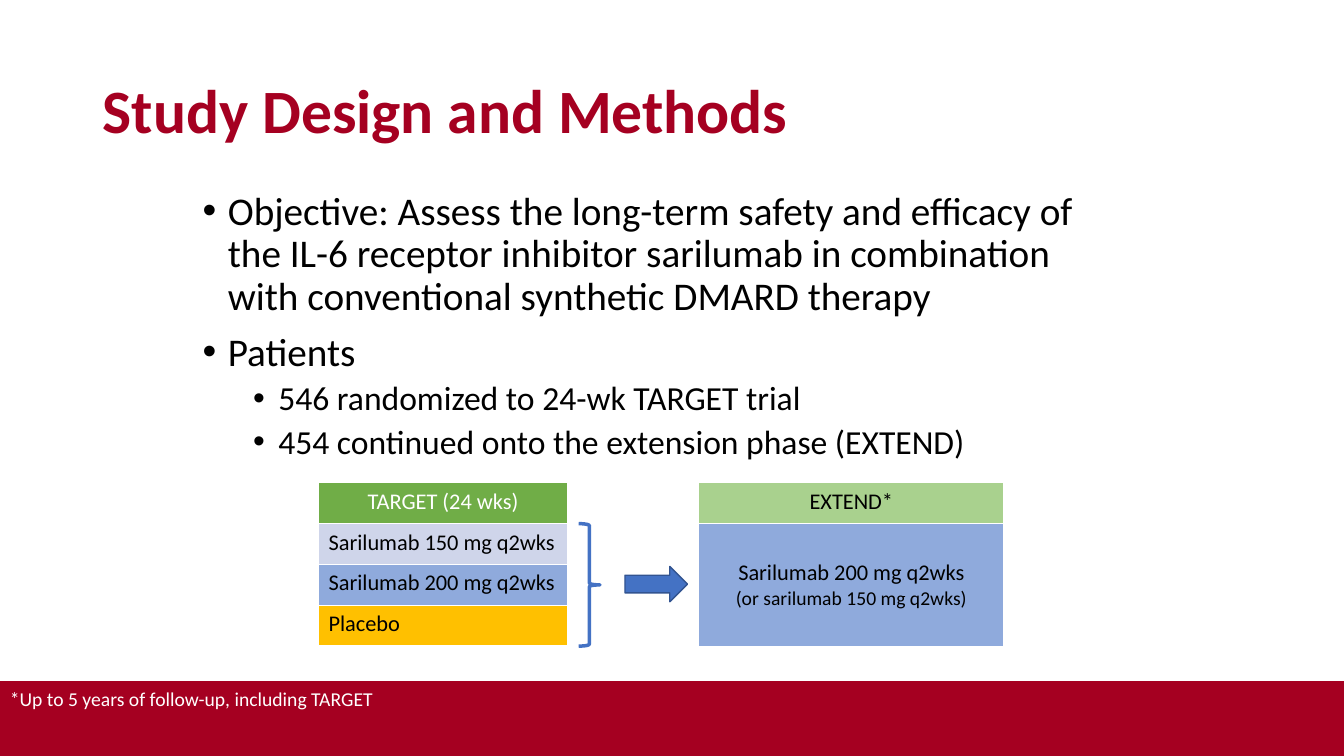
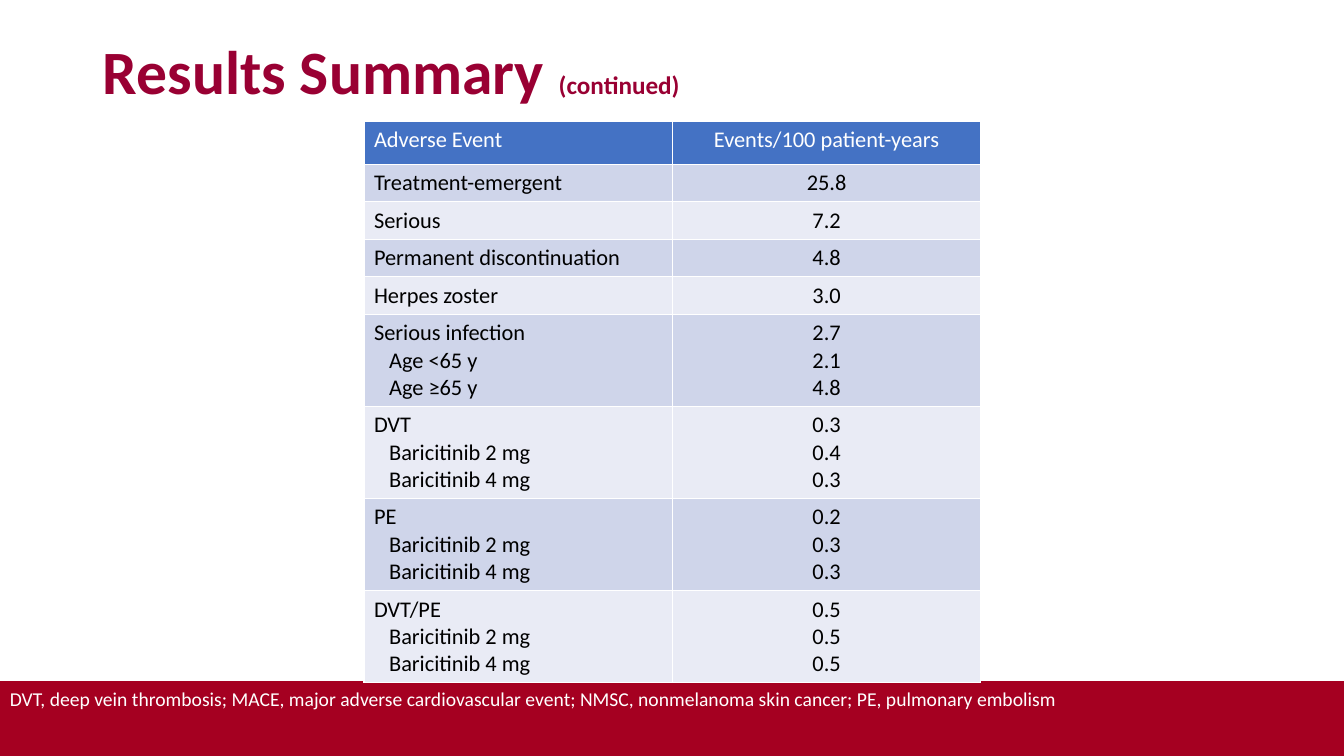
from lxml import etree
from pptx import Presentation
from pptx.dml.color import RGBColor
from pptx.enum.shapes import MSO_SHAPE
from pptx.enum.text import MSO_ANCHOR, MSO_AUTO_SIZE, PP_ALIGN
from pptx.oxml.ns import qn
from pptx.util import Inches, Pt

FONT = "Calibri"
WHITE = RGBColor(0xFF, 0xFF, 0xFF)
BLACK = RGBColor(0x00, 0x00, 0x00)
CRIMSON = RGBColor(0xA5, 0x00, 0x21)
WINE = RGBColor(0x99, 0x00, 0x33)
BLUE = RGBColor(0x44, 0x72, 0xC4)
DARK_BLUE = RGBColor(0x32, 0x54, 0x91)
MID_BLUE = RGBColor(0x8F, 0xAA, 0xDC)
PALE_BLUE = RGBColor(0xCF, 0xD5, 0xEA)
PALEST_BLUE = RGBColor(0xE9, 0xEB, 0xF5)
GREEN = RGBColor(0x70, 0xAD, 0x47)
PALE_GREEN = RGBColor(0xA9, 0xD1, 0x8E)
AMBER = RGBColor(0xFF, 0xC0, 0x00)

LEFT, CENTER = PP_ALIGN.LEFT, PP_ALIGN.CENTER
TOP, MIDDLE = MSO_ANCHOR.TOP, MSO_ANCHOR.MIDDLE
RECTANGLE = MSO_SHAPE.RECTANGLE
BRACE, ARROW = MSO_SHAPE.RIGHT_BRACE, MSO_SHAPE.RIGHT_ARROW
NO_FIT = MSO_AUTO_SIZE.NONE

deck = Presentation()
deck.slide_width, deck.slide_height = Inches(40 / 3), Inches(7.5)
CONTENT_LAYOUT, TITLE_ONLY_LAYOUT = deck.slide_layouts[1], deck.slide_layouts[5]


def place(left, top, width, height):
    """Turn percentages of the slide's width and height into lengths."""
    across, down = deck.slide_width / 100, deck.slide_height / 100
    return int(left * across), int(top * down), int(width * across), int(height * down)


def add_grid(page, left, top, column_width, row_heights, rows):
    """Add a table; each row is (fill, text colour, anchor, cells), each cell
    (alignment, lines), each line (text, size, indent in inches)."""
    frame = page.shapes.add_table(
        len(rows), len(rows[0][3]),
        *place(left, top, column_width * len(rows[0][3]), sum(row_heights)))
    table = frame.table
    for column in table.columns:
        column.width = place(0, 0, column_width, 0)[2]
    for number, (fill, color, anchor, cells) in enumerate(rows):
        table.rows[number].height = place(0, 0, 0, row_heights[number])[3]
        for cell, (alignment, lines) in zip(table.rows[number].cells, cells):
            cell.vertical_anchor = anchor
            properties = cell._tc.get_or_add_tcPr()
            for side in ("a:lnL", "a:lnR", "a:lnT", "a:lnB"):
                border = etree.SubElement(properties, qn(side), w=str(Pt(1)))
                solid = etree.SubElement(border, qn("a:solidFill"))
                etree.SubElement(solid, qn("a:srgbClr"), val=str(WHITE))
            cell.fill.solid()
            cell.fill.fore_color.rgb = fill
            cell.text_frame.text = "\n".join(line[0] for line in lines)
            for para, (_, size, indent) in zip(cell.text_frame.paragraphs, lines):
                para.alignment = alignment
                if indent:
                    para._p.get_or_add_pPr().set("marL", str(Inches(indent)))
                font = para.runs[0].font
                font.name, font.size, font.bold = FONT, Pt(size), False
                font.color.rgb = color


# Frame of every slide: title, footer band and footnote
pages = []
for layout, title_top, title_color, title_spans, note, note_width in [
    (CONTENT_LAYOUT, 5.33, CRIMSON, [("Study Design and Methods", 44)],
     "*Up to 5 years of follow-up, including TARGET", 33),
    (TITLE_ONLY_LAYOUT, 0.13, WINE, [("Results Summary ", 44), ("(continued)", 18)],
     "DVT, deep vein thrombosis; MACE, major adverse cardiovascular event; "
     "NMSC, nonmelanoma skin cancer; PE, pulmonary embolism", 84),
]:
    page = deck.slides.add_slide(layout)
    pages.append(page)

    title = page.shapes.title
    title.left, title.top, title.width, title.height = place(6.9, title_top, 86.25, 19.33)
    title.text_frame.auto_size = NO_FIT
    title.text_frame.vertical_anchor = MIDDLE
    para = title.text_frame.paragraphs[0]
    para.alignment, para.line_spacing = LEFT, 0.9
    for text, size in title_spans:
        span = para.add_run()
        span.text = text
        span.font.name, span.font.size, span.font.bold = FONT, Pt(size), True
        span.font.color.rgb = title_color

    band = page.shapes.add_shape(RECTANGLE, *place(0, 90.1, 100, 9.9))
    band.shadow.inherit = False
    band.fill.solid()
    band.fill.fore_color.rgb = CRIMSON
    band.line.fill.background()

    box = page.shapes.add_textbox(*place(0, 90.27, note_width, 4.53))
    box.text_frame.word_wrap = True
    box.text_frame.text = note
    font = box.text_frame.paragraphs[0].runs[0].font
    font.name, font.size = FONT, Pt(14)
    font.color.rgb = WHITE

design_page, results_page = pages

# Study design: bullets
body = design_page.placeholders[1]
body.left, body.top, body.width, body.height = place(14.33, 24.67, 69.69, 65.47)
body.text_frame.auto_size = NO_FIT
bullets = [
    (0, "Objective: Assess the long-term safety and efficacy of the IL-6 receptor "
        "inhibitor sarilumab in combination with conventional synthetic DMARD therapy"),
    (0, "Patients"),
    (1, "546 randomized to 24-wk TARGET trial"),
    (1, "454 continued onto the extension phase (EXTEND)"),
]
body.text_frame.text = "\n".join(text for _, text in bullets)
for para, (level, _) in zip(body.text_frame.paragraphs, bullets):
    para.level, para.line_spacing = level, 0.9
    para.space_before = Pt(5 if level else 10)
    properties = para._p.get_or_add_pPr()
    properties.set("marL", str(Inches(0.25 + 0.5 * level)))
    properties.set("indent", str(Inches(-0.25)))
    etree.SubElement(properties, qn("a:buFont"), typeface="Arial")
    etree.SubElement(properties, qn("a:buChar"), char="•")
    font = para.runs[0].font
    font.name, font.size = FONT, Pt(24 if level else 28)
    font.color.rgb = BLACK

# Study design: treatment arms before and after the extension
ARMS_TOP, ARM_HEIGHT = 63.87, 5.4
add_grid(design_page, 23.7, ARMS_TOP, 18.53, [ARM_HEIGHT] * 4, [
    (fill, color, TOP, [(alignment, [(text, 16, 0)])])
    for fill, color, alignment, text in [
        (GREEN, WHITE, CENTER, "TARGET (24 wks)"),
        (PALE_BLUE, BLACK, LEFT, "Sarilumab 150 mg q2wks"),
        (MID_BLUE, BLACK, LEFT, "Sarilumab 200 mg q2wks"),
        (AMBER, BLACK, LEFT, "Placebo"),
    ]
])
add_grid(design_page, 52, ARMS_TOP, 22.7, [ARM_HEIGHT, ARM_HEIGHT * 3], [
    (PALE_GREEN, BLACK, TOP, [(CENTER, [("EXTEND*", 16, 0)])]),
    (MID_BLUE, BLACK, MIDDLE, [(CENTER, [("Sarilumab 200 mg q2wks", 16, 0),
                                         ("(or sarilumab 150 mg q2wks)", 14, 0)])]),
])

brace = design_page.shapes.add_shape(
    BRACE, *place(43.06, ARMS_TOP + ARM_HEIGHT, 1.58, ARM_HEIGHT * 3))
brace.fill.background()
arrow = design_page.shapes.add_shape(ARROW, *place(46.5, 74.93, 4.65, 4.67))
arrow.fill.solid()
arrow.fill.fore_color.rgb = BLUE
for shape, color, width in [(brace, BLUE, 2.5), (arrow, DARK_BLUE, 1)]:
    shape.shadow.inherit = False
    shape.line.color.rgb = color
    shape.line.width = Pt(width)

# Results: adverse events, with subgroups indented below their event
AGES = ["Age <65 y", "Age ≥65 y"]
DOSES = ["Baricitinib 2 mg", "Baricitinib 4 mg"]
events = [
    ("Treatment-emergent", [], ["25.8"]),
    ("Serious", [], ["7.2"]),
    ("Permanent discontinuation", [], ["4.8"]),
    ("Herpes zoster", [], ["3.0"]),
    ("Serious infection", AGES, ["2.7", "2.1", "4.8"]),
    ("DVT", DOSES, ["0.3", "0.4", "0.3"]),
    ("PE", DOSES, ["0.2", "0.3", "0.3"]),
    ("DVT/PE", DOSES, ["0.5", "0.5", "0.5"]),
]
event_rows = [(BLUE, WHITE, TOP, [(LEFT, [("Adverse Event", 16, 0)]),
                                  (CENTER, [("Events/100 patient-years", 16, 0)])])]
event_heights = [5.73]
for number, (event, subgroups, rates) in enumerate(events):
    labels = [(event, 16, 0)] + [(subgroup, 16, 0.15) for subgroup in subgroups]
    event_rows.append((PALEST_BLUE if number % 2 else PALE_BLUE, BLACK, TOP,
                       [(LEFT, labels), (CENTER, [(rate, 16, 0) for rate in rates])]))
    event_heights.append(12.18 if subgroups else 4.97)
add_grid(results_page, 27.08, 16, 22.95, event_heights, event_rows)

deck.save("out.pptx")
